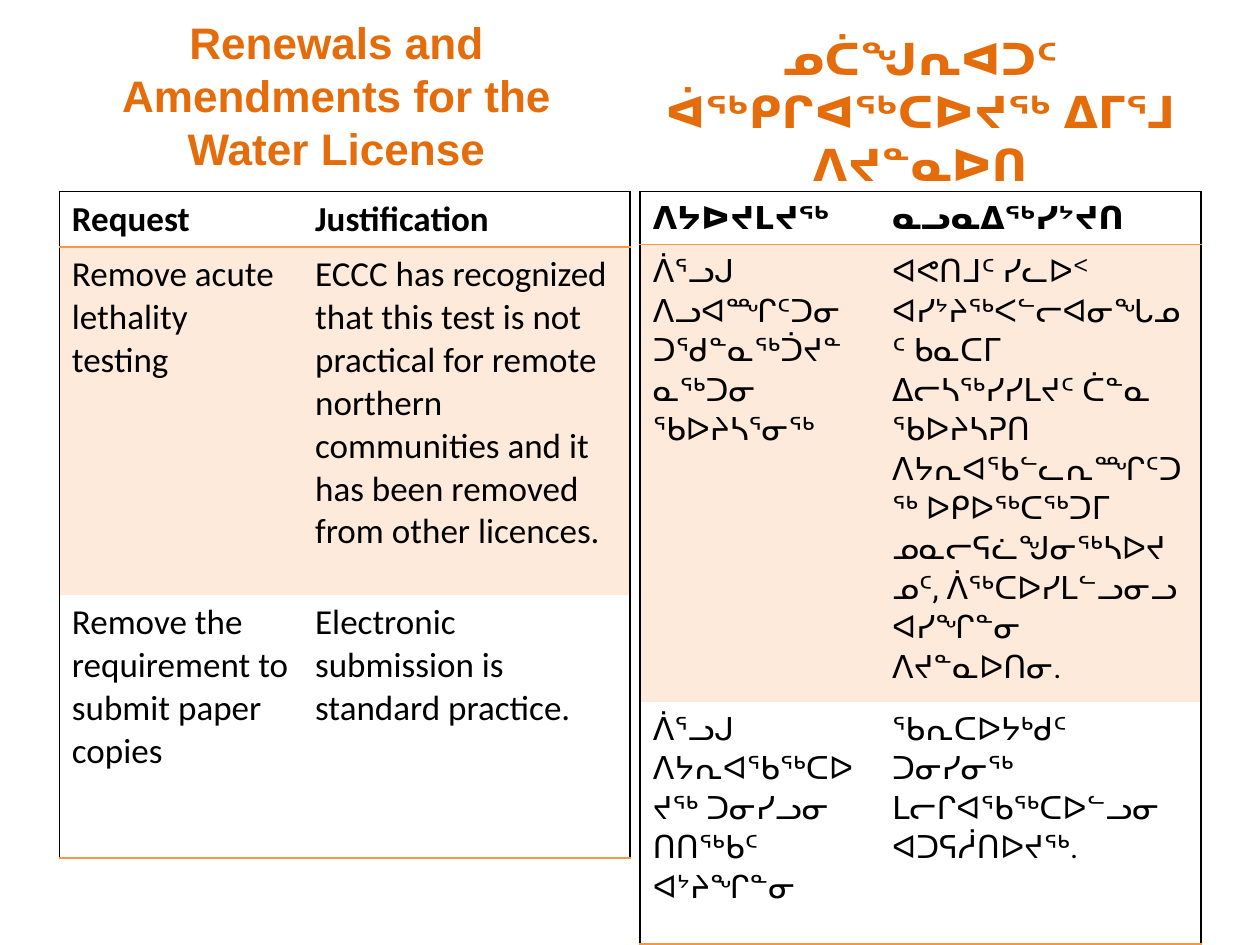
from lxml import etree
from pptx import Presentation
from pptx.dml.color import RGBColor
from pptx.enum.text import MSO_ANCHOR, PP_ALIGN
from pptx.oxml.ns import qn
from pptx.util import Pt

MIDDLE = MSO_ANCHOR.MIDDLE
CENTER = PP_ALIGN.CENTER

TITLE_COLOR, TEXT_COLOR = "E46C0A", "000000"
OUTER_LINE, ACCENT_LINE, BAND = "000000", "F79646", "FDEADA"
TABLE_TOP = 109.5

# Boxes are left, top, width, height in points.
PANELS = [
    {
        "title": "ᓄᑖᖑᕆᐊᑐᑦ ᐋᖅᑭᒋᐊᖅᑕᐅᔪᖅ ᐃᒥᕐᒧ ᐱᔪᓐᓇᐅᑎ",
        "title_box": (365.8, 15, 320.4, 96.5),
        "table_left": 365.8,
        "columns": (136.8, 183.6),
        "row_heights": (28.1, 181.4, 138.2),
        "font": "Roboto", "size": 18, "line_spacing": 1.07, "space_after": 8,
        "rows": [
            ("ᐱᔭᐅᔪᒪᔪᖅ", "ᓇᓗᓇᐃᖅᓯᔾᔪᑎ"),
            ("ᐲᕐᓗᒍ ᐱᓗᐊᙱᑦᑐᓂ ᑐᖁᓐᓇᖅᑑᔪᓐᓇᖅᑐᓂ ᖃᐅᔨᓴᕐᓂᖅ",
             "ᐊᕙᑎᒧᑦ ᓯᓚᐅᑉ ᐊᓯᔾᔨᖅᐸᓪᓕᐊᓂᖓᓄᑦ ᑲᓇᑕᒥ ᐃᓕᓴᖅᓯᓯᒪᔪᑦ ᑖᓐᓇ ᖃᐅᔨᓴᕈᑎ "
             "ᐱᔭᕆᐊᖃᓪᓚᕆᙱᑦᑐᖅ ᐅᑭᐅᖅᑕᖅᑐᒥ ᓄᓇᓕᕋᓛᖑᓂᖅᓴᐅᔪᓄᑦ, ᐲᖅᑕᐅᓯᒪᓪᓗᓂᓗ "
             "ᐊᓯᖏᓐᓂ ᐱᔪᓐᓇᐅᑎᓂ."),
            ("ᐲᕐᓗᒍ ᐱᔭᕆᐊᖃᖅᑕᐅᔪᖅ ᑐᓂᓯᓗᓂ ᑎᑎᖅᑲᑦ ᐊᔾᔨᖏᓐᓂ",
             "ᖃᕆᑕᐅᔭᒃᑯᑦ ᑐᓂᓯᓂᖅ ᒪᓕᒋᐊᖃᖅᑕᐅᓪᓗᓂ ᐊᑐᕋᓲᑎᐅᔪᖅ."),
        ],
    },
    {
        "title": "Renewals and Amendments for the Water License",
        "title_box": (36, 8.6, 312.5, 91.4),
        "table_left": 33.9,
        "columns": (139, 187.2),
        "row_heights": (31.7, 198.7, 150.5),
        "font": "Calibri", "size": 20, "line_spacing": None, "space_after": None,
        "rows": [
            ("Request", "Justification"),
            ("Remove acute lethality testing",
             "ECCC has recognized that this test is not practical for remote "
             "northern communities and it has been removed from other licences."),
            ("Remove the requirement to submit paper copies",
             "Electronic submission is standard practice."),
        ],
    },
]


def rgb(value):
    return RGBColor.from_string(value)


def add_run(paragraph, text, font, size, color, bold):
    run = paragraph.add_run()
    run.text = text
    run.font.name, run.font.size, run.font.bold = font, Pt(size), bold
    run.font.color.rgb = rgb(color)


def set_borders(cell, colors):
    """Draw the sides named in colors (L, R, T, B) and clear the others."""
    properties = cell._tc.get_or_add_tcPr()
    for side in "LRTB":
        line = etree.SubElement(properties, qn("a:ln" + side), w=str(Pt(1)))
        if side in colors:
            fill = etree.SubElement(line, qn("a:solidFill"))
            etree.SubElement(fill, qn("a:srgbClr"), val=colors[side])
        else:
            etree.SubElement(line, qn("a:noFill"))


def add_title(slide, panel):
    frame = slide.shapes.add_textbox(*map(Pt, panel["title_box"])).text_frame
    frame.word_wrap = True
    frame.vertical_anchor = MIDDLE
    heading = frame.paragraphs[0]
    heading.alignment = CENTER
    add_run(heading, panel["title"], "Arial", 25.2, TITLE_COLOR, True)


def add_request_table(slide, panel):
    rows, columns, heights = panel["rows"], panel["columns"], panel["row_heights"]
    table = slide.shapes.add_table(
        len(rows), len(columns), Pt(panel["table_left"]), Pt(TABLE_TOP),
        Pt(sum(columns)), Pt(sum(heights))).table
    table.first_row = table.horz_banding = False
    for column, width in zip(table.columns, columns):
        column.width = Pt(width)
    for r, (row, height) in enumerate(zip(rows, heights)):
        table.rows[r].height = Pt(height)
        for c, text in enumerate(row):
            cell = table.cell(r, c)
            borders = {"L" if c == 0 else "R": OUTER_LINE}
            if r < 2:
                borders["T"] = OUTER_LINE if r == 0 else ACCENT_LINE
            if r != 1:
                borders["B"] = ACCENT_LINE
            set_borders(cell, borders)
            if r == 1:
                cell.fill.solid()
                cell.fill.fore_color.rgb = rgb(BAND)
            else:
                cell.fill.background()
            paragraph = cell.text_frame.paragraphs[0]
            if panel["line_spacing"]:
                paragraph.line_spacing = panel["line_spacing"]
                paragraph.space_after = Pt(panel["space_after"])
            add_run(paragraph, text, panel["font"], panel["size"], TEXT_COLOR, r == 0)


presentation = Presentation()
presentation.slide_width, presentation.slide_height = Pt(720), Pt(540)
slide = presentation.slides.add_slide(presentation.slide_layouts[6])
for panel in PANELS:
    add_title(slide, panel)
    add_request_table(slide, panel)
presentation.save("out.pptx")
